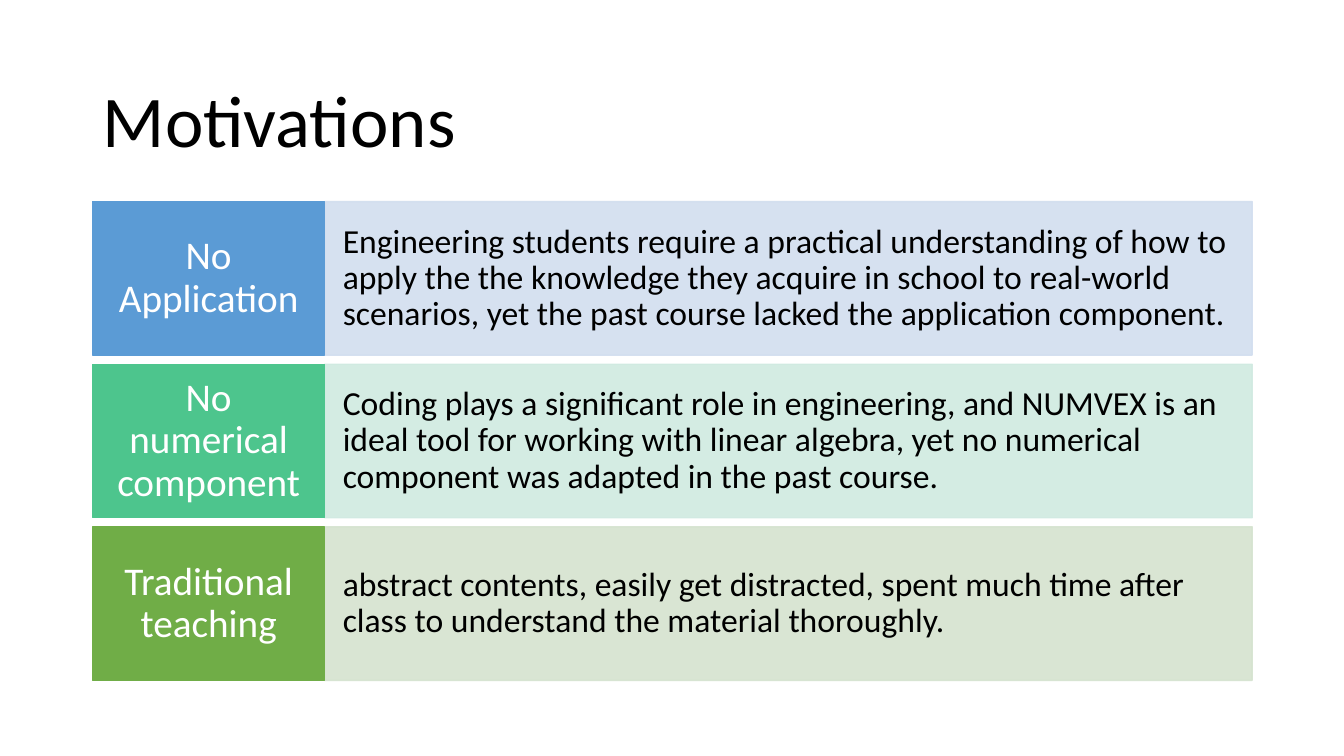
import pptx
import pptx.util
import pptx.dml.color
import pptx.enum.shapes
import pptx.enum.text
from dataclasses import dataclass
from lxml import etree

Inches = pptx.util.Inches
Align = pptx.enum.text.PP_ALIGN


@dataclass(frozen=True)
class Theme:
    font: str = "Calibri"
    black: str = "000000"
    white: str = "FFFFFF"
    title: int = 52
    label: int = 28
    body: int = 24
    alpha: int = 90


THEME = Theme()

# Label, text, label colour, text panel colour
ROWS = [
    ("No Application",
     "Engineering students require a practical understanding of how to "
     "apply the the knowledge they acquire in school to real-world "
     "scenarios, yet the past course lacked the application component.",
     "5B9BD5", "D2DEEF"),
    ("No numerical component",
     "Coding plays a significant role in engineering, and NUMVEX is an "
     "ideal tool for working with linear algebra, yet no numerical "
     "component was adapted in the past course.",
     "4DC58D", "D0EAE1"),
    ("Traditional teaching",
     "abstract contents, easily get distracted, spent much time after "
     "class to understand the material thoroughly.",
     "70AD47", "D5E3CF"),
]


def paint(fill, color, alpha=100):
    """Fill with a solid colour, see-through if alpha is below 100."""
    fill.solid()
    fill.fore_color.rgb = pptx.dml.color.RGBColor.from_string(color)
    if alpha < 100:
        tint = fill._xPr.find(".//" + pptx.oxml.ns.qn("a:srgbClr"))
        etree.SubElement(tint, pptx.oxml.ns.qn("a:alpha"),
                         val=str(alpha * 1000))


def write(frame, text, size, color, align, inset):
    """Set one paragraph, centred from top to bottom."""
    frame.text = text
    frame.word_wrap = True
    frame.auto_size = pptx.enum.text.MSO_AUTO_SIZE.NONE
    frame.vertical_anchor = pptx.enum.text.MSO_ANCHOR.MIDDLE
    frame.margin_left = frame.margin_right = Inches(inset)
    frame.margin_top = frame.margin_bottom = Inches(0.05)
    para = frame.paragraphs[0]
    para.alignment = align
    para.line_spacing = 0.9
    font = para.runs[0].font
    font.name = THEME.font
    font.size = pptx.util.Pt(size)
    font.color.rgb = pptx.dml.color.RGBColor.from_string(color)


def add_title(slide, text, left, top, width, height):
    title = slide.shapes.title
    title.left, title.top = Inches(left), Inches(top)
    title.width, title.height = Inches(width), Inches(height)
    write(title.text_frame, text, THEME.title, THEME.black, Align.LEFT, 0.1)


def add_panel(slide, left, top, width, height, color, alpha=100):
    panel = slide.shapes.add_shape(
        pptx.enum.shapes.MSO_SHAPE.RECTANGLE,
        Inches(left), Inches(top), Inches(width), Inches(height))
    panel.shadow.inherit = False
    paint(panel.fill, color, alpha)
    panel.line.width = pptx.util.Pt(1)
    paint(panel.line.fill, color, alpha)
    return panel.text_frame


def add_rows(slide, rows, left, top, width, height):
    """Stack equal rows; the label takes a fifth of the width."""
    gap = 0.09
    high = (height - gap * (len(rows) - 1)) / len(rows)
    side = width / 5
    for i, (label, text, dark, light) in enumerate(rows):
        y = top + i * (high + gap)
        body = add_panel(slide, left + side, y, width - side, high,
                         light, THEME.alpha)
        write(body, text, THEME.body, THEME.black, Align.LEFT, 0.18)
        head = add_panel(slide, left, y, side, high, dark)
        write(head, label, THEME.label, THEME.white, Align.CENTER, 0.12)


def main():
    deck = pptx.Presentation()
    deck.slide_width, deck.slide_height = Inches(13.33), Inches(7.5)
    slide = deck.slides.add_slide(deck.slide_layouts.get_by_name("Title Only"))
    paint(slide.background.fill, THEME.white)
    add_title(slide, "Motivations", 0.92, 0.61, 11.5, 1.24)
    add_rows(slide, ROWS, 0.92, 2, 11.5, 4.75)
    deck.save("out.pptx")


if __name__ == "__main__":
    main()
